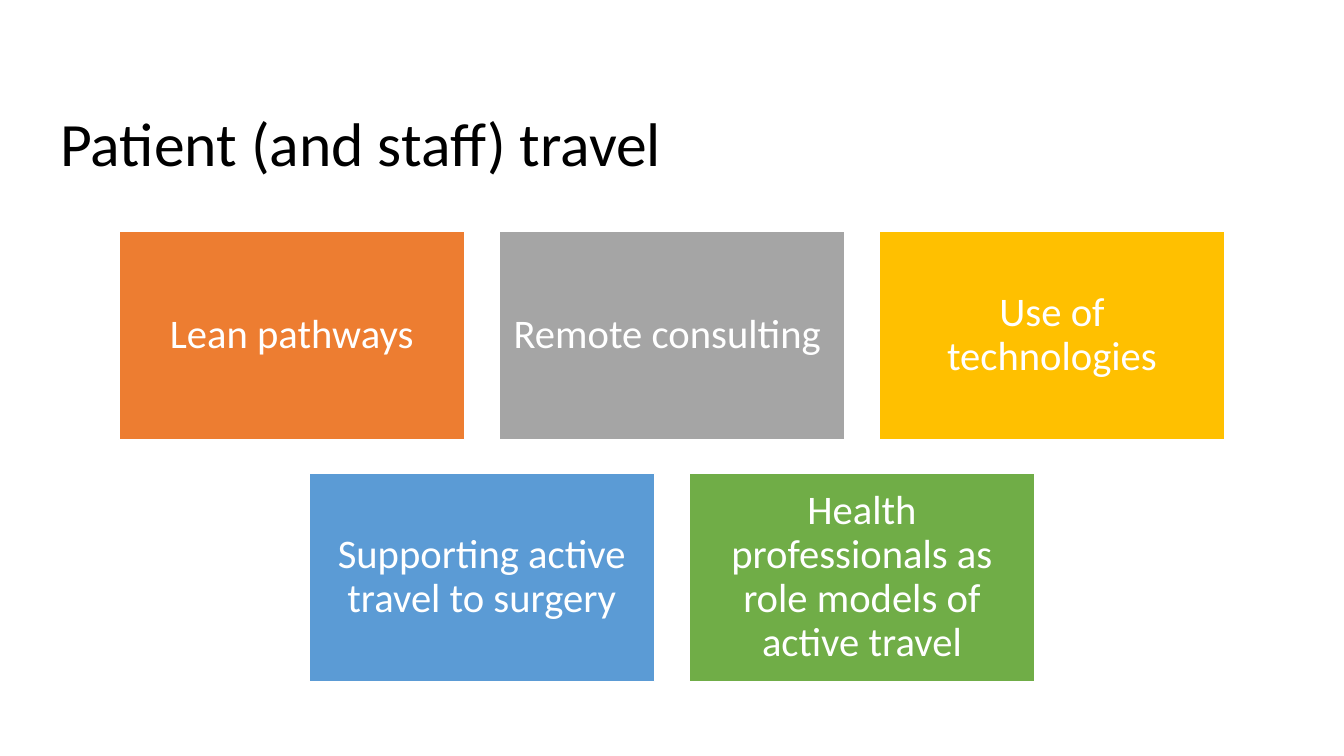
from pptx import Presentation
from pptx.dml.color import RGBColor
from pptx.enum.shapes import MSO_SHAPE
from pptx.enum.text import MSO_ANCHOR, PP_ALIGN
from pptx.util import Inches, Pt

BLACK = RGBColor(0x00, 0x00, 0x00)
WHITE = RGBColor(0xFF, 0xFF, 0xFF)
ORANGE = RGBColor(0xED, 0x7D, 0x31)
GRAY = RGBColor(0xA5, 0xA5, 0xA5)
GOLD = RGBColor(0xFF, 0xC0, 0x00)
BLUE = RGBColor(0x5B, 0x9B, 0xD5)
GREEN = RGBColor(0x70, 0xAD, 0x47)

SLIDE_W = 13.33
CARD_W, CARD_H, GAP = 3.43, 2.06, 0.34
TOP = 2.3

ROWS = [
    [("Lean pathways", ORANGE), ("Remote consulting ", GRAY), ("Use of technologies", GOLD)],
    [("Supporting active travel to surgery", BLUE),
     ("Health professionals as role models of active travel", GREEN)],
]


def write(sp, text, size, color, align=PP_ALIGN.LEFT, inset_x=0.1, inset_y=0.05):
    tf = sp.text_frame
    tf.word_wrap = True
    tf.vertical_anchor = MSO_ANCHOR.MIDDLE
    tf.margin_left = tf.margin_right = Inches(inset_x)
    tf.margin_top = tf.margin_bottom = Inches(inset_y)
    p = tf.paragraphs[0]
    p.alignment = align
    p.line_spacing = 0.9
    r = p.add_run()
    r.text = text
    r.font.name = "Calibri"
    r.font.size = Pt(size)
    r.font.color.rgb = color


prs = Presentation()
prs.slide_width = Inches(SLIDE_W)
prs.slide_height = Inches(7.5)
s = prs.slides.add_slide(prs.slide_layouts[6])

title = s.shapes.add_textbox(Inches(0.5), Inches(0.73), Inches(12.23), Inches(1.45))
write(title, "Patient (and staff) travel", 44, BLACK)

for row, cards in enumerate(ROWS):
    row_w = len(cards) * (CARD_W + GAP) - GAP
    left = (SLIDE_W - row_w) / 2
    top = TOP + row * (CARD_H + GAP)
    for col, (text, color) in enumerate(cards):
        sp = s.shapes.add_shape(MSO_SHAPE.RECTANGLE, Inches(left + col * (CARD_W + GAP)),
                                Inches(top), Inches(CARD_W), Inches(CARD_H))
        sp.shadow.inherit = False
        sp.fill.solid()
        sp.fill.fore_color.rgb = color
        sp.line.color.rgb = WHITE
        sp.line.width = Pt(1)
        write(sp, text, 29, WHITE, align=PP_ALIGN.CENTER, inset_x=0.12, inset_y=0.12)

prs.save("out.pptx")
